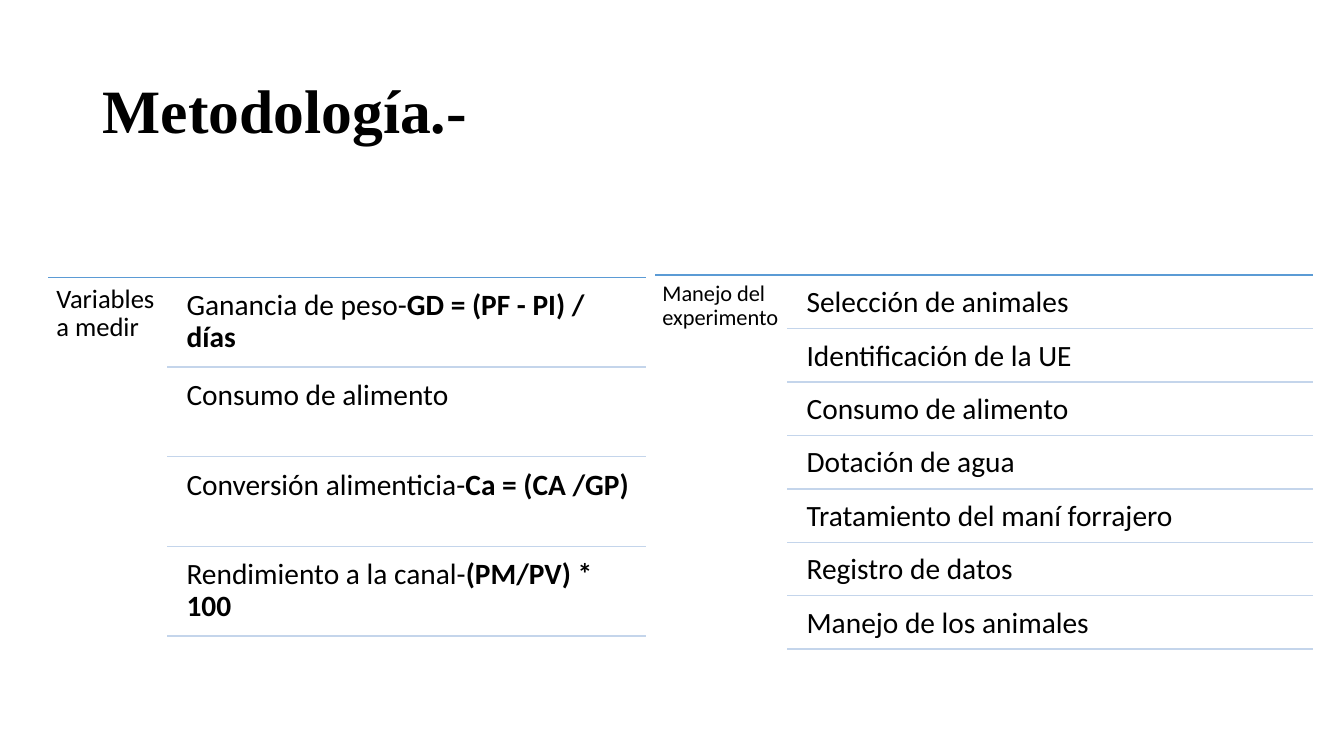
from lxml.etree import SubElement
from pptx import Presentation
from pptx.dml.color import RGBColor
from pptx.enum.shapes import MSO_CONNECTOR as Connector
from pptx.enum.text import MSO_ANCHOR as Anchor
from pptx.oxml.ns import qn
from pptx.util import Inches, Pt

COLORS = {"text": "000000", "header": "5B9BD5", "divider": "C4D5EB"}
BODY_FONT, TITLE_FONT = "Calibri", "Times New Roman"
ITEM_SIZE, ITEM_INSET, ITEM_INDENT = 21, 0.09, 0.1

VARIABLES = [
    ("Ganancia de peso-", "GD = (PF - PI) / días"),
    ("Consumo de alimento",),
    ("Conversión alimenticia-", "Ca = (CA /GP)"),
    ("Rendimiento a la canal-", "(PM/PV) * 100"),
]
HANDLING = [
    ("Selección de animales",),
    ("Identificación de la UE",),
    ("Consumo de alimento",),
    ("Dotación de agua",),
    ("Tratamiento del maní forrajero",),
    ("Registro de datos",),
    ("Manejo de los animales",),
]


def add_text(shapes, box, runs, size, inset, font=BODY_FONT, anchor=Anchor.TOP):
    shape = shapes.add_textbox(*map(Inches, box))
    frame = shape.text_frame
    frame.word_wrap = True
    frame.vertical_anchor = anchor
    frame.margin_left = frame.margin_right = Inches(inset)
    frame.margin_top = frame.margin_bottom = Inches(inset)
    paragraph = frame.paragraphs[0]
    paragraph.line_spacing = 0.9
    for text, bold in runs:
        run = paragraph.add_run()
        run.text = text
        run.font.name = font
        run.font.size = Pt(size)
        run.font.bold = bold
        run.font.color.rgb = RGBColor.from_string(COLORS["text"])


def add_rule(shapes, left, right, y, color):
    ends = map(Inches, (left, y, right, y))
    rule = shapes.add_connector(Connector.STRAIGHT, *ends)
    rule.line.color.rgb = RGBColor.from_string(COLORS[color])
    rule.line.width = Pt(1)
    SubElement(rule._element.spPr, qn("a:effectLst"))


def add_lined_list(slide, left, top, right, label, label_width, label_size,
                   label_inset, items, row_height, gap):
    shapes = slide.shapes.add_group_shape().shapes
    item_left = left + label_width
    text_left = item_left + ITEM_INDENT
    add_rule(shapes, left, right, top, "header")
    label_box = (left, top, label_width, row_height * len(items))
    add_text(shapes, label_box, [(label, False)], label_size, label_inset)
    for row, parts in enumerate(items):
        row_top = top + row * row_height
        box = (text_left, row_top + gap, right - text_left, row_height - gap)
        runs = [(part, index > 0) for index, part in enumerate(parts)]
        add_text(shapes, box, runs, ITEM_SIZE, ITEM_INSET)
        add_rule(shapes, item_left, right, row_top + row_height, "divider")


def main():
    presentation = Presentation()
    presentation.slide_width = Inches(13.33)
    presentation.slide_height = Inches(7.5)
    slide = presentation.slides.add_slide(presentation.slide_layouts[6])
    add_text(slide.shapes, (0.92, 0.4, 11.5, 1.45), [("Metodología.-", True)],
             44, 0.1, TITLE_FONT, Anchor.MIDDLE)
    add_lined_list(slide, 0.48, 2.75, 6.41, "Variables a medir", 1.18, 19,
                   0.08, VARIABLES, 0.89, 0.04)
    add_lined_list(slide, 6.5, 2.73, 13.02, "Manejo del experimento", 1.31, 16,
                   0.07, HANDLING, 0.53, 0.03)
    presentation.save("out.pptx")


if __name__ == "__main__":
    main()
